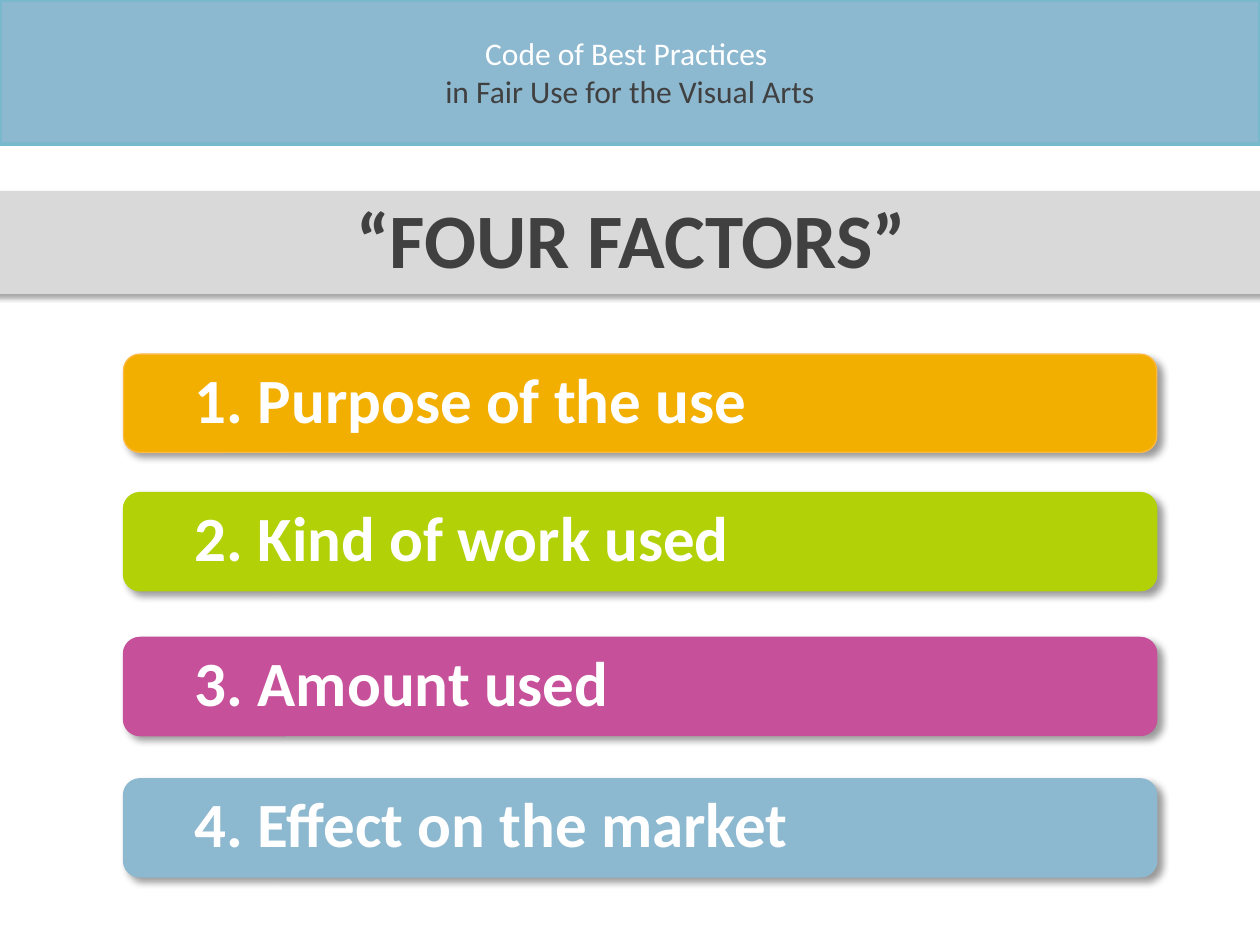
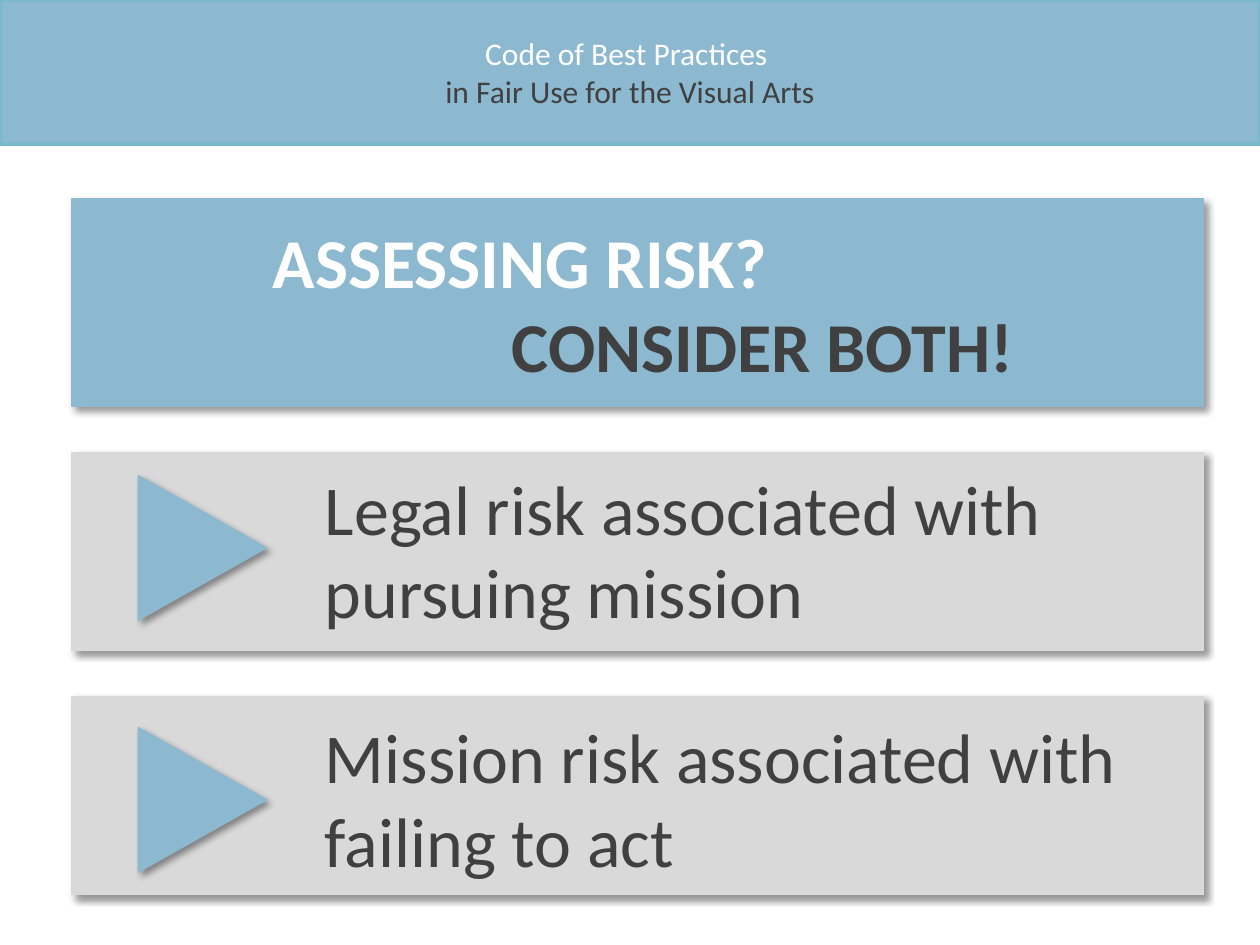
import pptx
import pptx.dml.color
import pptx.enum.shapes
import pptx.enum.text
import pptx.oxml
import pptx.oxml.ns
import pptx.util

Cm, Pt = pptx.util.Cm, pptx.util.Pt
SHAPE = pptx.enum.shapes.MSO_SHAPE
ALIGN = pptx.enum.text.PP_ALIGN
ANCHOR = pptx.enum.text.MSO_ANCHOR
AUTOFIT = pptx.enum.text.MSO_AUTO_SIZE

FONT = "Calibri"
BLUE, HEADER_EDGE = "8CB8D0", "79B9CE"
GREY, DARK, WHITE = "D9D9D9", "404040", "FFFFFF"
# opacity %, blur pt, distance pt, angle in degrees
CORNER_SHADOW = (40, 4, 3, 45)
BOTTOM_SHADOW = (35, 3.1, 1.8, 90)

SLIDE_W, SLIDE_H = 25.4, 19.05
HEADER = [("Code of Best Practices ", WHITE), ("in Fair Use for the Visual Arts", DARK)]

FACTORS_TITLE = "“FOUR FACTORS”"
# text, fill, edge, top, text width
FACTORS = [
    ("1. Purpose of the use", "F2AF00", "FDB840", 7.14, 12),
    ("2. Kind of work used", "B2D107", "B2D107", 9.93, 16.2),
    ("3. Amount used", "C6519A", "C6519A", 12.85, 9.73),
    ("4. Effect on the market", BLUE, BLUE, 15.7, 15),
]
BAR_LEFT, BAR_W, BAR_H, BAR_TEXT_LEFT = 2.49, 20.83, 1.98, 3.68

# text, colour, alignment, left indent
RISK_TITLE = [
    ("ASSESSING RISK?", WHITE, ALIGN.LEFT, 3.8),
    ("CONSIDER BOTH!", DARK, ALIGN.CENTER, 5.03),
]
# text, panel top, text top, arrow top
RISKS = [
    ("Legal risk associated with pursuing mission", 9.12, 9.25, 9.75),
    ("Mission risk associated with failing to act", 14.05, 14.25, 14.83),
]
PANEL_LEFT, PANEL_W, PANEL_H = 1.45, 22.81, 3.99


def rgb(value):
    return pptx.dml.color.RGBColor.from_string(value)


def add_shadow(sp, opacity, blur, distance, angle):
    sp._element.spPr.append(pptx.oxml.parse_xml(
        f'<a:effectLst {pptx.oxml.ns.nsdecls("a")}>'
        f'<a:outerShdw blurRad="{Pt(blur)}" dist="{Pt(distance)}" '
        f'dir="{angle * 60000}" rotWithShape="0"><a:srgbClr val="000000">'
        f'<a:alpha val="{opacity * 1000}"/></a:srgbClr></a:outerShdw></a:effectLst>'))


def add_block(s, kind, box, fill, edge=None, edge_pt=0.75, shadow=CORNER_SHADOW):
    sp = s.shapes.add_shape(kind, *map(Cm, box))
    sp.fill.solid()
    sp.fill.fore_color.rgb = rgb(fill)
    sp.line.color.rgb = rgb(edge or fill)
    sp.line.width = Pt(edge_pt)
    if shadow:
        add_shadow(sp, *shadow)
    else:
        sp.shadow.inherit = False
    return sp


def write_line(p, text, size, color, bold=False, align=ALIGN.LEFT, indent=0):
    p.alignment = align
    if indent:
        p._p.get_or_add_pPr().set("marL", str(Cm(indent)))
    r = p.add_run()
    r.text = text
    r.font.name, r.font.size, r.font.bold = FONT, Pt(size), bold
    r.font.color.rgb = rgb(color)


def write_lines(sp, lines, size, bold=False):
    """Fill a shape with (text, colour, alignment, indent) paragraphs."""
    tf = sp.text_frame
    tf.word_wrap = True
    tf.vertical_anchor = ANCHOR.MIDDLE
    for i, (text, color, align, indent) in enumerate(lines):
        p = tf.add_paragraph() if i else tf.paragraphs[0]
        write_line(p, text, size, color, bold, align, indent)


def add_text(s, box, text, size, color, bold=False, align=ALIGN.LEFT, wrap=True):
    tf = s.shapes.add_textbox(*map(Cm, box)).text_frame
    tf.word_wrap = wrap
    tf.auto_size = AUTOFIT.SHAPE_TO_FIT_TEXT
    write_line(tf.paragraphs[0], text, size, color, bold, align)


def add_slide(prs):
    """Blank slide with the shared header band."""
    s = prs.slides.add_slide(prs.slide_layouts[6])
    band = add_block(s, SHAPE.RECTANGLE, (0, 0, SLIDE_W, 2.9), BLUE, HEADER_EDGE, 2, None)
    write_lines(band, [(text, color, ALIGN.CENTER, 0) for text, color in HEADER], 18)
    return s


def build_factors(prs):
    s = add_slide(prs)
    add_block(s, SHAPE.RECTANGLE, (-1.73, 3.86, 27.94, 2.06), GREY, shadow=BOTTOM_SHADOW)
    add_text(s, (6.78, 3.73, 11.89, 2.13), FACTORS_TITLE, 44, DARK, True, ALIGN.CENTER, False)
    for text, fill, edge, top, text_w in FACTORS:
        add_block(s, SHAPE.ROUNDED_RECTANGLE, (BAR_LEFT, top, BAR_W, BAR_H), fill, edge)
        add_text(s, (BAR_TEXT_LEFT, top, text_w, 1.8), text, 36, WHITE, True)


def build_risks(prs):
    s = add_slide(prs)
    title = add_block(s, SHAPE.RECTANGLE, (PANEL_LEFT, 4.01, PANEL_W, 4.19), BLUE)
    write_lines(title, RISK_TITLE, 40, True)
    for text, top, text_top, arrow_top in RISKS:
        add_block(s, SHAPE.RECTANGLE, (PANEL_LEFT, top, PANEL_W, PANEL_H), GREY)
        add_text(s, (6.3, text_top, 16.76, 3.68), text, 40, DARK)
        arrow = add_block(s, SHAPE.ISOSCELES_TRIANGLE, (2.62, arrow_top, 2.92, 2.59), BLUE)
        arrow.rotation = 90


def main():
    prs = pptx.Presentation()
    prs.slide_width, prs.slide_height = Cm(SLIDE_W), Cm(SLIDE_H)
    build_factors(prs)
    build_risks(prs)
    prs.save("out.pptx")


if __name__ == "__main__":
    main()
